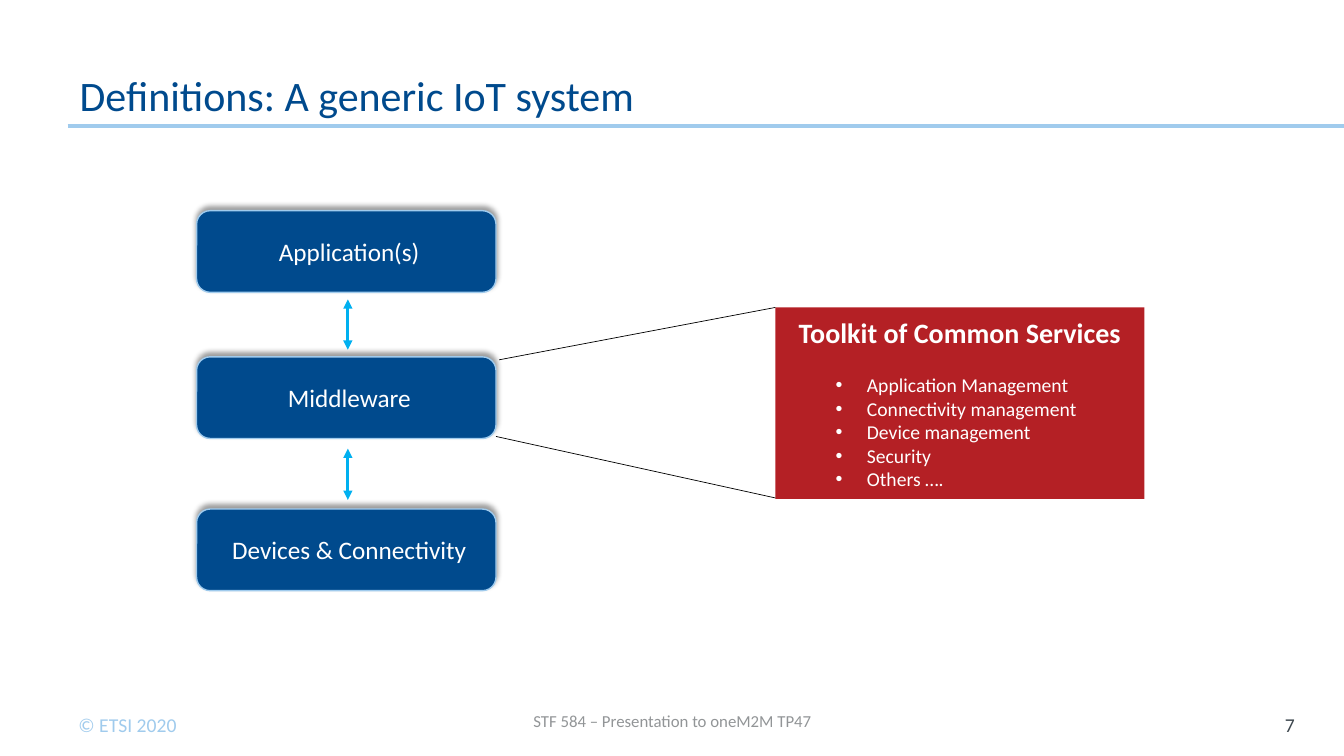
from dataclasses import dataclass

import pptx
import pptx.dml.color
import pptx.enum.dml
import pptx.enum.shapes
import pptx.enum.text
import pptx.oxml
import pptx.oxml.ns
import pptx.util
from pptx.util import Inches

NAVY, SKY, CYAN, RED = "004A8D", "A0CBED", "00B0F0", "B42025"
WHITE, BLACK, SLATE, GREY = "FFFFFF", "000000", "3E484F", "929597"
ALIGN = pptx.enum.text.PP_ALIGN
ANCHOR = pptx.enum.text.MSO_ANCHOR
SHAPE = pptx.enum.shapes.MSO_SHAPE
NAMESPACE = pptx.oxml.ns.nsdecls("a")


@dataclass
class Caption:
    text: str
    area: tuple[float, float, float, float]
    size: int
    colour: str
    align: ALIGN = ALIGN.LEFT
    anchor: ANCHOR = ANCHOR.MIDDLE
    margins: tuple[float, float, float, float] = (0.1, 0.05, 0.1, 0.05)


@dataclass
class Layer:
    text: str
    top: float


@dataclass
class Line:
    start: tuple[float, float]
    end: tuple[float, float]
    colour: str
    width: float
    arrows: bool = False


CAPTIONS = [
    Caption("© ETSI 2020", (0.68, 7.02, 1.34, 0.34), 14, SKY, anchor=ANCHOR.TOP),
    Caption("7", (12.25, 6.99, 0.69, 0.4), 14, SLATE, ALIGN.RIGHT,
            margins=(0, 0.05, 0.1, 0.05)),
    Caption("STF 584 – Presentation to oneM2M TP47", (4.42, 6.95, 4.5, 0.4), 12, GREY,
            ALIGN.CENTER),
]
TITLE = Caption("Definitions: A generic IoT system", (0.67, 0.3, 10.42, 0.95), 30, NAVY,
                anchor=ANCHOR.BOTTOM, margins=(0.12, 0.06, 0.12, 0.06))
LAYERS = [Layer("Application(s)", 2.09), Layer("Middleware", 3.54),
          Layer("Devices & Connectivity", 5.05)]
LAYER_LEFT, LAYER_WIDTH, LAYER_HEIGHT = 1.95, 2.97, 0.81
TOOLKIT_AREA = (7.69, 3.05, 3.66, 1.9)
SERVICES = ["Application Management", "Connectivity management", "Device management",
            "Security", "Others …."]
LINES = [
    Line((0.67, 1.25), (13.33, 1.25), SKY, 2.25),
    Line((4.95, 3.57), (7.69, 3.05), BLACK, 0.5),
    Line((4.92, 4.33), (7.69, 4.94), BLACK, 0.5),
    Line((3.45, 3.47), (3.45, 2.97), CYAN, 2.25, arrows=True),
    Line((3.45, 4.96), (3.45, 4.45), CYAN, 2.25, arrows=True),
]


def rgb(colour: str) -> pptx.dml.color.RGBColor:
    return pptx.dml.color.RGBColor.from_string(colour)


def apply_format(target, values: dict) -> None:
    for name, value in values.items():
        setattr(target, name, value)


def add_span(para, text: str, size: int, colour: str, bold: bool = False) -> None:
    span = para.add_run()
    span.text = text
    apply_format(span.font, {"name": "Calibri", "size": pptx.util.Pt(size), "bold": bold})
    span.font.color.rgb = rgb(colour)


def set_frame(frame, anchor: ANCHOR, margins: tuple[float, float, float, float]) -> None:
    left, top, right, bottom = map(Inches, margins)
    apply_format(frame, {
        "word_wrap": True, "auto_size": pptx.enum.text.MSO_AUTO_SIZE.NONE,
        "vertical_anchor": anchor, "margin_left": left, "margin_top": top,
        "margin_right": right, "margin_bottom": bottom})


def write_caption(box, caption: Caption) -> None:
    set_frame(box.text_frame, caption.anchor, caption.margins)
    para = box.text_frame.paragraphs[0]
    para.alignment = caption.align
    add_span(para, caption.text, caption.size, caption.colour)


def add_title(page) -> None:
    title = page.shapes.title
    names = ("left", "top", "width", "height")
    apply_format(title, dict(zip(names, map(Inches, TITLE.area))))
    write_caption(title, TITLE)
    title.text_frame.paragraphs[0].line_spacing = pptx.util.Pt(30)


def add_filled(page, kind: SHAPE, area: tuple[float, float, float, float], colour: str):
    box = page.shapes.add_shape(kind, *map(Inches, area))
    box.shadow.inherit = False
    box.fill.solid()
    box.fill.fore_color.rgb = rgb(colour)
    box.line.fill.background()
    return box


def add_layer(page, layer: Layer) -> None:
    area = (LAYER_LEFT, layer.top, LAYER_WIDTH, LAYER_HEIGHT)
    box = add_filled(page, SHAPE.ROUNDED_RECTANGLE, area, NAVY)
    box.line.color.rgb = rgb(SKY)
    box.line.width = pptx.util.Pt(1)
    effects = box._element.spPr.find(pptx.oxml.ns.qn("a:effectLst"))
    effects.append(pptx.oxml.parse_xml(
        f'<a:outerShdw {NAMESPACE} blurRad="{pptx.util.Pt(4)}" dist="{pptx.util.Pt(3)}" '
        f'dir="16200000" rotWithShape="0"><a:srgbClr val="{BLACK}">'
        '<a:alpha val="40000"/></a:srgbClr></a:outerShdw>'))
    write_caption(box, Caption(layer.text, area, 18, WHITE, ALIGN.CENTER,
                               margins=(0.1, 0.04, 0.04, 0.04)))


def add_bullet(para) -> None:
    properties = para._p.get_or_add_pPr()
    properties.set("marL", str(Inches(0.81)))
    properties.set("indent", str(Inches(-0.31)))
    for xml in (f'<a:buFont {NAMESPACE} typeface="Arial"/>',
                f'<a:buChar {NAMESPACE} char="•"/>'):
        properties.append(pptx.oxml.parse_xml(xml))


def add_toolkit(page) -> None:
    box = add_filled(page, SHAPE.RECTANGLE, TOOLKIT_AREA, RED)
    frame = box.text_frame
    set_frame(frame, ANCHOR.MIDDLE, (0.1, 0.05, 0.1, 0.05))
    heading = frame.paragraphs[0]
    heading.alignment = ALIGN.CENTER
    add_span(heading, "Toolkit of Common Services", 20, WHITE, bold=True)
    for index, service in enumerate(SERVICES):
        para = frame.add_paragraph()
        apply_format(para, {"level": 1, "alignment": ALIGN.LEFT,
                            "space_before": pptx.util.Pt(0 if index else 17)})
        add_bullet(para)
        add_span(para, service, 14, WHITE)


def add_line(page, line: Line) -> None:
    connector = page.shapes.add_connector(
        pptx.enum.shapes.MSO_CONNECTOR.STRAIGHT, *map(Inches, line.start + line.end))
    connector.line.color.rgb = rgb(line.colour)
    connector.line.width = pptx.util.Pt(line.width)
    if line.arrows:
        for end in ("headEnd", "tailEnd"):
            connector.line._get_or_add_ln().append(
                pptx.oxml.parse_xml(f'<a:{end} {NAMESPACE} type="triangle"/>'))
    connector._element.spPr.append(pptx.oxml.parse_xml(f"<a:effectLst {NAMESPACE}/>"))


def main() -> None:
    deck = pptx.Presentation()
    deck.slide_width, deck.slide_height = Inches(13.33), Inches(7.5)
    page = deck.slides.add_slide(deck.slide_layouts.get_by_name("Title Only"))
    add_title(page)
    for caption in CAPTIONS:
        write_caption(page.shapes.add_textbox(*map(Inches, caption.area)), caption)
    for layer in LAYERS:
        add_layer(page, layer)
    add_toolkit(page)
    for line in LINES:
        add_line(page, line)
    deck.save("out.pptx")


if __name__ == "__main__":
    main()
